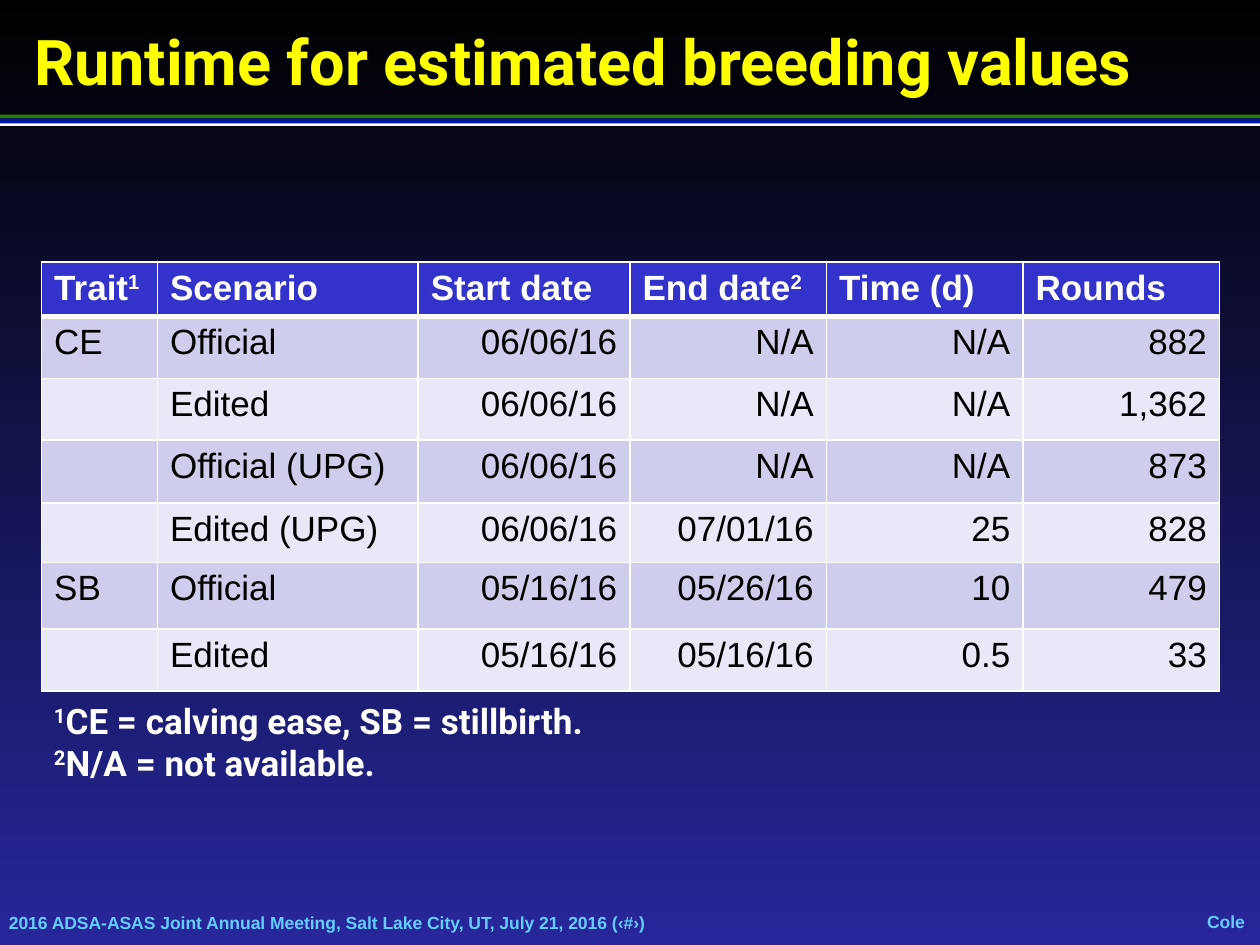
from lxml.etree import SubElement
from pptx import Presentation
from pptx.dml.color import RGBColor
from pptx.enum.shapes import MSO_SHAPE as Shape
from pptx.enum.text import MSO_ANCHOR as Anchor, MSO_AUTO_SIZE as AutoSize, PP_ALIGN as Align
from pptx.oxml.ns import qn
from pptx.util import Inches, Pt

WHITE, BLACK, YELLOW, SKY = "FFFFFF", "000000", "FFFF00", "66CCFF"
HEADER_FILL, BAND_FILLS = "3333CC", ("CECEEC", "E8E8F6")

COLUMN_WIDTHS = (0.92, 2.07, 1.68, 1.56, 1.56, 1.56)
ROW_HEIGHTS = (0.42, 0.49, 0.49, 0.5, 0.47, 0.53, 0.49)
# A caret marks a superscript digit
ROWS = (
    ("Trait^1", "Scenario", "Start date", "End date^2", "Time (d)", "Rounds"),
    ("CE", "Official", "06/06/16", "N/A", "N/A", "882"),
    ("", "Edited", "06/06/16", "N/A", "N/A", "1,362"),
    ("", "Official (UPG)", "06/06/16", "N/A", "N/A", "873"),
    ("", "Edited (UPG)", "06/06/16", "07/01/16", "25", "828"),
    ("SB", "Official", "05/16/16", "05/26/16", "10", "479"),
    ("", "Edited", "05/16/16", "05/16/16", "0.5", "33"),
)
FOOTNOTES = ("^1CE = calving ease, SB = stillbirth.", "^2N/A = not available.")


def rgb(color):
    return RGBColor.from_string(color)


def write(paragraph, text, size, font_name, color, bold=True, align=Align.LEFT):
    """Fill a paragraph, raising the digit after a caret."""
    paragraph.alignment = align
    font = paragraph.font
    font.size, font.name, font.bold = Pt(size), font_name, bold
    font.color.rgb = rgb(color)
    plain, caret, rest = text.partition("^")
    if plain:
        paragraph.add_run().text = plain
    if caret:
        raised = paragraph.add_run()
        raised.text = rest[0]
        raised.font._element.set("baseline", "30000")
    if rest[1:]:
        paragraph.add_run().text = rest[1:]


def set_background(slide):
    fill = slide.background.fill
    fill.gradient()
    fill.gradient_angle = 270
    for stop, color in zip(fill.gradient_stops, (BLACK, "27279B")):
        stop.color.rgb = rgb(color)


def place_title(slide, left, top, width, height):
    title = slide.shapes.title
    title.left, title.top, title.width, title.height = map(Inches, (left, top, width, height))
    frame = title.text_frame
    frame.auto_size = AutoSize.NONE
    frame.vertical_anchor = Anchor.MIDDLE
    write(frame.paragraphs[0], "Runtime for estimated breeding values", 36, "Roboto", YELLOW)


def add_rules(slide, left, top, width):
    """Green, white and blue stripes under the title."""
    for offset, height, color in ((0, 0.03, "2A7E00"), (0.06, 0.03, WHITE), (0.03, 0.04, "001799")):
        stripe = slide.shapes.add_shape(
            Shape.RECTANGLE, Inches(left), Inches(top + offset), Inches(width), Inches(height))
        stripe.shadow.inherit = False
        stripe.fill.solid()
        stripe.fill.fore_color.rgb = rgb(color)
        stripe.line.fill.background()


def set_borders(cell, top_width, bottom_width):
    properties = cell._tc.get_or_add_tcPr()
    sides = (("a:lnL", 1), ("a:lnR", 1), ("a:lnT", top_width), ("a:lnB", bottom_width))
    for position, (tag, width) in enumerate(sides):
        line = SubElement(properties, qn(tag), w=str(Pt(width)))
        properties.insert(position, line)
        SubElement(SubElement(line, qn("a:solidFill")), qn("a:srgbClr"), val=WHITE)


def add_runtime_table(slide, left, top, width, height):
    table = slide.shapes.add_table(
        len(ROWS), len(COLUMN_WIDTHS), Inches(left), Inches(top), Inches(width), Inches(height)).table
    for column, column_width in zip(table.columns, COLUMN_WIDTHS):
        column.width = Inches(column_width)
    for row_index, (row, row_height) in enumerate(zip(table.rows, ROW_HEIGHTS)):
        row.height = Inches(row_height)
        is_header = row_index == 0
        for column_index, cell in enumerate(row.cells):
            cell.fill.solid()
            cell.fill.fore_color.rgb = rgb(
                HEADER_FILL if is_header else BAND_FILLS[(row_index - 1) % 2])
            set_borders(cell, 3 if row_index == 1 else 1, 3 if is_header else 1)
            is_value = not is_header and column_index >= 2
            write(cell.text_frame.paragraphs[0], ROWS[row_index][column_index], 20, "Arial",
                  WHITE if is_header else BLACK, is_header, Align.RIGHT if is_value else Align.LEFT)


def add_text_frame(slide, left, top, width, height):
    box = slide.shapes.add_textbox(Inches(left), Inches(top), Inches(width), Inches(height))
    box.text_frame.word_wrap = True
    return box.text_frame


def add_footnotes(slide, left, top, width, height):
    frame = add_text_frame(slide, left, top, width, height)
    for index, note in enumerate(FOOTNOTES):
        paragraph = frame.add_paragraph() if index else frame.paragraphs[0]
        write(paragraph, note, 20, "Roboto", WHITE)


def add_footer(slide, text, align, left, top, width, height):
    frame = add_text_frame(slide, left, top, width, height)
    frame.margin_left = frame.margin_right = frame.margin_top = frame.margin_bottom = 0
    frame.word_wrap = align == Align.LEFT
    frame.vertical_anchor = Anchor.MIDDLE
    write(frame.paragraphs[0], text, 10, "Arial", SKY, align=align)


def main():
    presentation = Presentation()
    presentation.slide_width, presentation.slide_height = Inches(10), Inches(7.5)
    slide = presentation.slides.add_slide(presentation.slide_layouts[5])

    set_background(slide)
    # Footer line
    add_footer(slide, "2016 ADSA-ASAS Joint Annual Meeting, Salt Lake City, UT, July 21, 2016 (‹#›)",
               Align.LEFT, 0.07, 7.24, 8.09, 0.17)
    add_footer(slide, "Cole", Align.CENTER, 9.58, 7.23, 0.3, 0.17)
    # Heading
    add_rules(slide, 0, 0.91, 10)
    place_title(slide, 0.17, 0.13, 9.66, 0.7)
    # Content
    add_runtime_table(slide, 0.33, 2.08, 9.33, 3.39)
    add_footnotes(slide, 0.33, 5.5, 6, 0.77)

    presentation.save("out.pptx")


if __name__ == "__main__":
    main()
